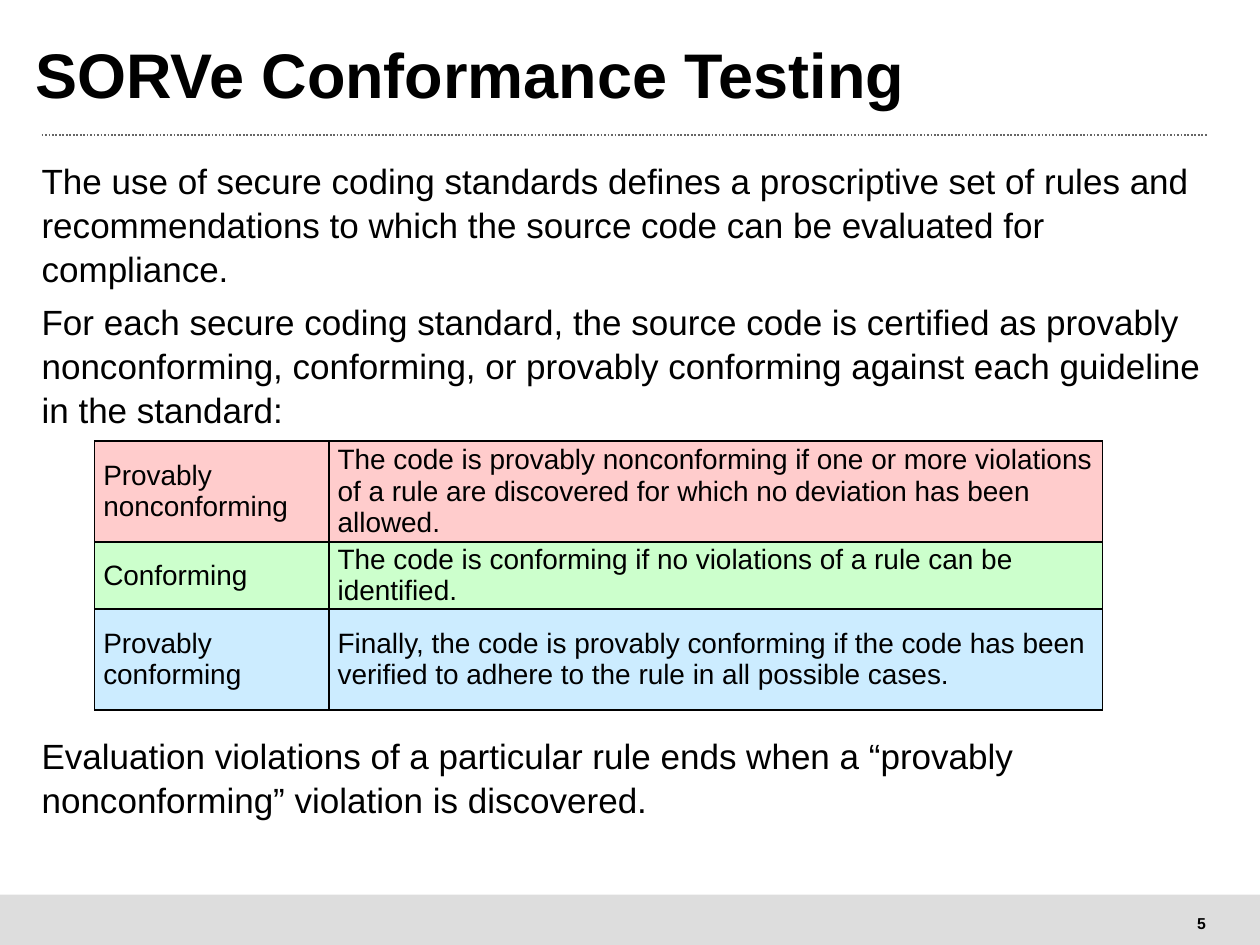
import pptx
import pptx.dml.color
import pptx.enum.dml
import pptx.enum.shapes
import pptx.enum.text
import pptx.oxml
import pptx.oxml.ns
import pptx.util
from dataclasses import dataclass

Inches = pptx.util.Inches
Pt = pptx.util.Pt
Align = pptx.enum.text.PP_ALIGN
Anchor = pptx.enum.text.MSO_ANCHOR


@dataclass(frozen=True)
class Theme:
    font: str = "Arial"
    ink: str = "000000"
    rule: str = "666666"
    footer: str = "DDDDDD"
    nonconforming: str = "FFCCCC"
    conforming: str = "CCFFCC"
    provably_conforming: str = "CCECFF"
    title_size: int = 36
    body_size: int = 20
    table_size: int = 16
    number_size: int = 9


THEME = Theme()

INTRODUCTION = [
    "The use of secure coding standards defines a proscriptive set of rules and "
    "recommendations to which the source code can be evaluated for compliance.",
    "For each secure coding standard, the source code is certified as provably "
    "nonconforming, conforming, or provably conforming against each guideline in the standard:",
]
CONCLUSION = [
    "Evaluation violations of a particular rule ends when a “provably nonconforming” "
    "violation is discovered.",
]
# Level (\v is a line break), definition, fill, row height in inches
LEVELS = [
    ("Provably\vnonconforming",
     "The code is provably nonconforming if one or more violations of a rule are "
     "discovered for which no deviation has been allowed.",
     THEME.nonconforming, 0.8),
    ("Conforming",
     "The code is conforming if no violations of a rule can be identified.",
     THEME.conforming, 0.49),
    ("Provably\vconforming",
     "Finally, the code is provably conforming if the code has been verified to adhere "
     "to the rule in all possible cases.",
     THEME.provably_conforming, 0.8),
]


def rgb(value):
    return pptx.dml.color.RGBColor.from_string(value)


def style_paragraph(paragraph, size, bold=False):
    for run in paragraph.runs:
        run.font.name = THEME.font
        run.font.size = Pt(size)
        run.font.bold = bold
        run.font.color.rgb = rgb(THEME.ink)


def add_text(slide, box, texts, size, bold=False, anchor=Anchor.TOP,
             align=Align.LEFT, line_spacing=1.0, space_after=0):
    frame = slide.shapes.add_textbox(*map(Inches, box)).text_frame
    frame.word_wrap = True
    frame.vertical_anchor = anchor
    frame.margin_left = frame.margin_right = frame.margin_top = frame.margin_bottom = 0
    for index, text in enumerate(texts):
        paragraph = frame.add_paragraph() if index else frame.paragraphs[0]
        paragraph.text = text
        paragraph.alignment = align
        paragraph.line_spacing = line_spacing
        paragraph.space_after = Pt(space_after)
        style_paragraph(paragraph, size, bold)


def add_body(slide, top, height, texts):
    add_text(slide, (0.33, top, 9.25, height), texts, THEME.body_size,
             line_spacing=1.05, space_after=5)


def add_footer(slide):
    band = slide.shapes.add_shape(pptx.enum.shapes.MSO_SHAPE.RECTANGLE,
                                  Inches(0), Inches(7.1), Inches(10), Inches(0.4))
    band.shadow.inherit = False
    band.fill.solid()
    band.fill.fore_color.rgb = rgb(THEME.footer)
    band.line.fill.background()
    add_text(slide, (9.36, 7.2, 0.35, 0.25), ["5"], THEME.number_size, bold=True,
             anchor=Anchor.MIDDLE, align=Align.CENTER)


def add_title_rule(slide):
    rule = slide.shapes.add_connector(pptx.enum.shapes.MSO_CONNECTOR.STRAIGHT,
                                      Inches(0.33), Inches(1.07), Inches(9.58), Inches(1.07))
    rule.line.color.rgb = rgb(THEME.rule)
    rule.line.width = Pt(1)
    rule.line.dash_style = pptx.enum.dml.MSO_LINE.ROUND_DOT
    properties = rule._element.spPr
    properties.append(pptx.oxml.parse_xml(
        f"<a:effectLst {pptx.oxml.ns.nsdecls('a')}/>"))


def add_borders(cell):
    """Outline all four sides; call before filling, as the schema wants borders first."""
    properties = cell._tc.get_or_add_tcPr()
    for side in ("lnL", "lnR", "lnT", "lnB"):
        properties.append(pptx.oxml.parse_xml(
            f'<a:{side} {pptx.oxml.ns.nsdecls("a")} w="{Pt(1)}"><a:solidFill>'
            f'<a:srgbClr val="{THEME.ink}"/></a:solidFill></a:{side}>'))


def fill_cell(cell, text, color):
    add_borders(cell)
    cell.fill.solid()
    cell.fill.fore_color.rgb = rgb(color)
    cell.vertical_anchor = Anchor.MIDDLE
    cell.margin_left = cell.margin_right = Inches(0.07)
    cell.margin_top = cell.margin_bottom = 0
    paragraph = cell.text_frame.paragraphs[0]
    paragraph.text = text
    style_paragraph(paragraph, THEME.table_size)


def add_levels_table(slide):
    height = sum(level[-1] for level in LEVELS)
    table = slide.shapes.add_table(len(LEVELS), 2, Inches(0.75), Inches(3.5),
                                   Inches(8), Inches(height)).table
    table.first_row = table.horz_banding = False
    for column, width in zip(table.columns, (1.86, 6.14)):
        column.width = Inches(width)
    for row, (level, definition, color, row_height) in zip(table.rows, LEVELS):
        row.height = Inches(row_height)
        for cell, text in zip(row.cells, (level, definition)):
            fill_cell(cell, text, color)


def main():
    presentation = pptx.Presentation()
    presentation.slide_width = Inches(10)
    presentation.slide_height = Inches(7.5)
    slide = presentation.slides.add_slide(presentation.slide_layouts[6])

    add_footer(slide)
    add_title_rule(slide)
    add_text(slide, (0.28, 0.25, 9.27, 0.78), ["SORVe Conformance Testing"],
             THEME.title_size, bold=True, anchor=Anchor.MIDDLE, line_spacing=0.8)
    add_body(slide, 1.25, 2.15, INTRODUCTION)
    add_levels_table(slide)
    add_body(slide, 5.81, 1.02, CONCLUSION)

    presentation.save("out.pptx")


if __name__ == "__main__":
    main()
